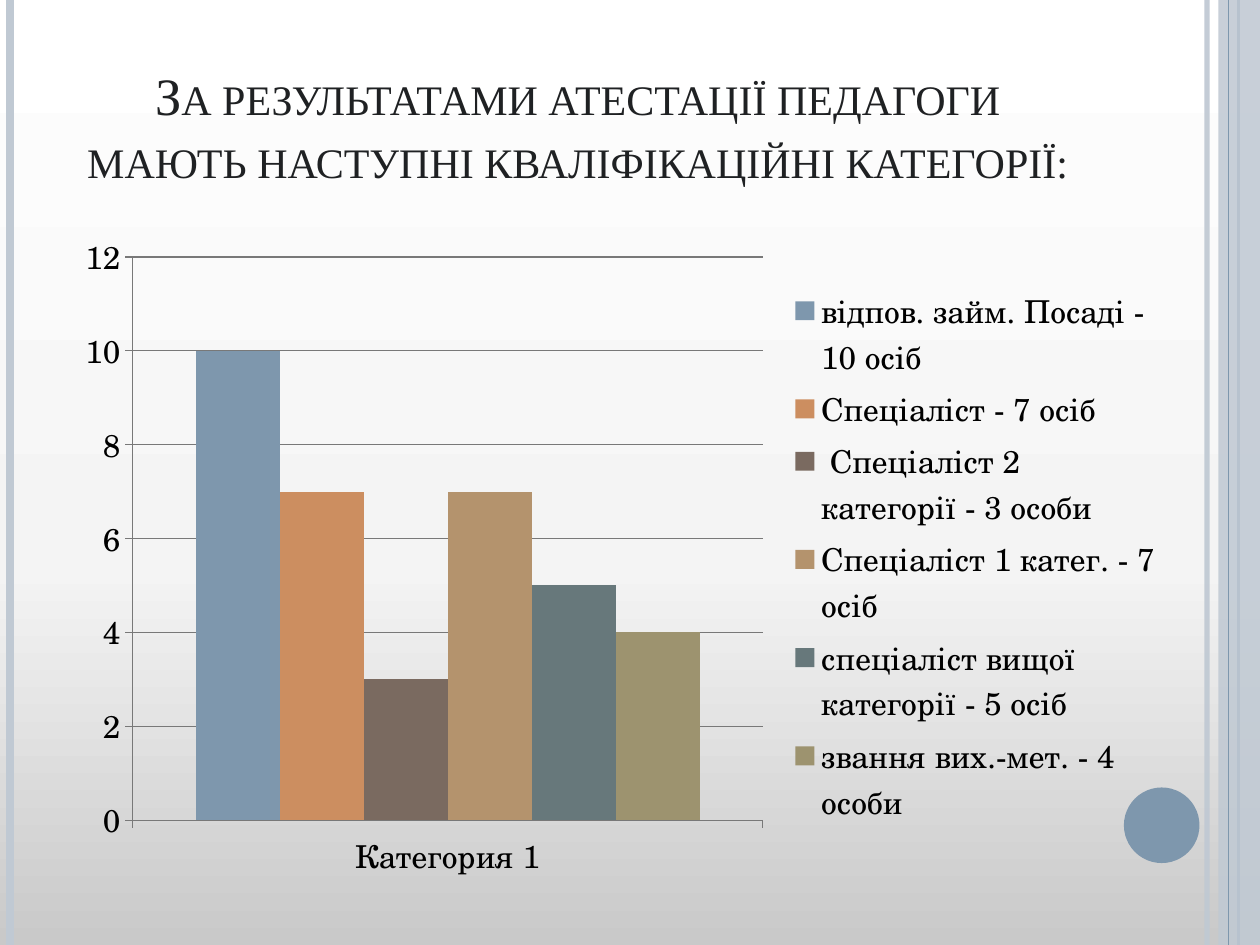
from lxml import etree
from pptx import Presentation
from pptx.chart.data import CategoryChartData
from pptx.dml.color import RGBColor
from pptx.enum.chart import XL_CHART_TYPE, XL_LEGEND_POSITION, XL_TICK_MARK
from pptx.enum.shapes import MSO_CONNECTOR, MSO_SHAPE
from pptx.enum.text import MSO_ANCHOR, PP_ALIGN
from pptx.oxml.ns import qn
from pptx.util import Inches, Pt


def color(hex_string):
    return RGBColor.from_string(hex_string)


def set_alpha(fill_parent, percent):
    """Make the solid fill found inside an XML element partly transparent."""
    rgb = next(fill_parent.iter(qn("a:srgbClr")))
    etree.SubElement(rgb, qn("a:alpha")).set("val", str(percent * 1000))


presentation = Presentation()
presentation.slide_width = Inches(10)
presentation.slide_height = Inches(7.5)
slide = presentation.slides.add_slide(presentation.slide_layouts[6])

# Background: grey at the bottom fading to white at the top
background = slide.background.fill
background.gradient()
background.gradient_angle = 90
stops = next(slide.background._cSld.iter(qn("a:gsLst")))
for stop in list(stops):
    stops.remove(stop)
for position, shade in [(0, "C9C9C9"), (40, "F4F4F4"), (100, "FFFFFF")]:
    stop = etree.SubElement(stops, qn("a:gs"), pos=str(position * 1000))
    etree.SubElement(stop, qn("a:srgbClr"), val=shade)

# Vertical stripes, back to front: x, colour, width, opacity.
# The translucent side band lies between the third and the last stripe.
stripes = [
    (9.58, "C0C9D3", 3, 93),
    (0.08, "C0C9D3", 4.5, 100),
    (9.83, "7E97AD", 1.5, 100),
    (9.75, "7E97AD", 0.75, 100),
]
for index, (x, stripe_color, width, opacity) in enumerate(stripes):
    if index == 3:
        band = slide.shapes.add_shape(
            MSO_SHAPE.RECTANGLE, Inches(9.67), 0, Inches(0.33), Inches(7.5))
        band.shadow.inherit = False
        band.fill.solid()
        band.fill.fore_color.rgb = color("C0C9D3")
        set_alpha(band._element.spPr, 87)
        band.line.fill.background()
    stripe = slide.shapes.add_connector(
        MSO_CONNECTOR.STRAIGHT, Inches(x), 0, Inches(x), Inches(7.5))
    stripe.line.color.rgb = color(stripe_color)
    stripe.line.width = Pt(width)
    if opacity < 100:
        set_alpha(stripe._element.spPr, opacity)
    etree.SubElement(stripe._element.spPr, qn("a:effectLst"))

circle = slide.shapes.add_shape(
    MSO_SHAPE.OVAL, Inches(8.92), Inches(6.25), Inches(0.6), Inches(0.6))
circle.shadow.inherit = False
circle.fill.solid()
circle.fill.fore_color.rgb = color("7E97AD")
circle.line.fill.background()

# Title
title = slide.shapes.add_textbox(Inches(0.5), Inches(0.3), Inches(8.17), Inches(1.25))
title.text_frame.word_wrap = True
title.text_frame.vertical_anchor = MSO_ANCHOR.BOTTOM
paragraph = title.text_frame.paragraphs[0]
paragraph.alignment = PP_ALIGN.CENTER
run = paragraph.add_run()
run.text = "За результатами атестації педагоги мають наступні кваліфікаційні категорії:"
run.font.name = "Times New Roman"
run.font.size = Pt(30)
run.font.color.rgb = color("1F2123")
run.font._element.set("cap", "small")

# Chart
categories = [
    ("відпов. займ. Посаді - 10 осіб", 10, "7E97AD"),
    ("Спеціаліст - 7 осіб", 7, "CC8E60"),
    (" Спеціаліст 2 категорії - 3 особи", 3, "7A6A60"),
    ("Спеціаліст 1 катег. - 7 осіб", 7, "B4936D"),
    ("спеціаліст вищої категорії - 5 осіб", 5, "67787B"),
    ("звання вих.-мет. - 4 особи", 4, "9D936F"),
]
chart_data = CategoryChartData()
chart_data.categories = ["Категория 1"]
for name, count, _ in categories:
    chart_data.add_series(name, [count])
chart = slide.shapes.add_chart(
    XL_CHART_TYPE.COLUMN_CLUSTERED,
    Inches(0.5), Inches(1.75), Inches(8.83), Inches(5.33), chart_data).chart
chart.has_title = False
chart.font.name = "TeX Gyre Schola"
chart.font.size = Pt(18)
chart.font.color.rgb = color("000000")
chart.has_legend = True
chart.legend.position = XL_LEGEND_POSITION.RIGHT
chart.legend.include_in_layout = False

plot = chart.plots[0]
plot.gap_width = 150
plot.overlap = 0
plot.vary_by_categories = False
for series, (_, _, series_color) in zip(plot.series, categories):
    series.format.fill.solid()
    series.format.fill.fore_color.rgb = color(series_color)

value_axis = chart.value_axis
value_axis.minimum_scale = 0
value_axis.maximum_scale = 12
value_axis.major_unit = 2
value_axis.has_major_gridlines = True
for axis in (chart.category_axis, value_axis):
    axis.major_tick_mark = XL_TICK_MARK.OUTSIDE
for axis_part in (chart.category_axis, value_axis, value_axis.major_gridlines):
    axis_part.format.line.color.rgb = color("787878")
    axis_part.format.line.width = Pt(0.75)

presentation.save("out.pptx")
